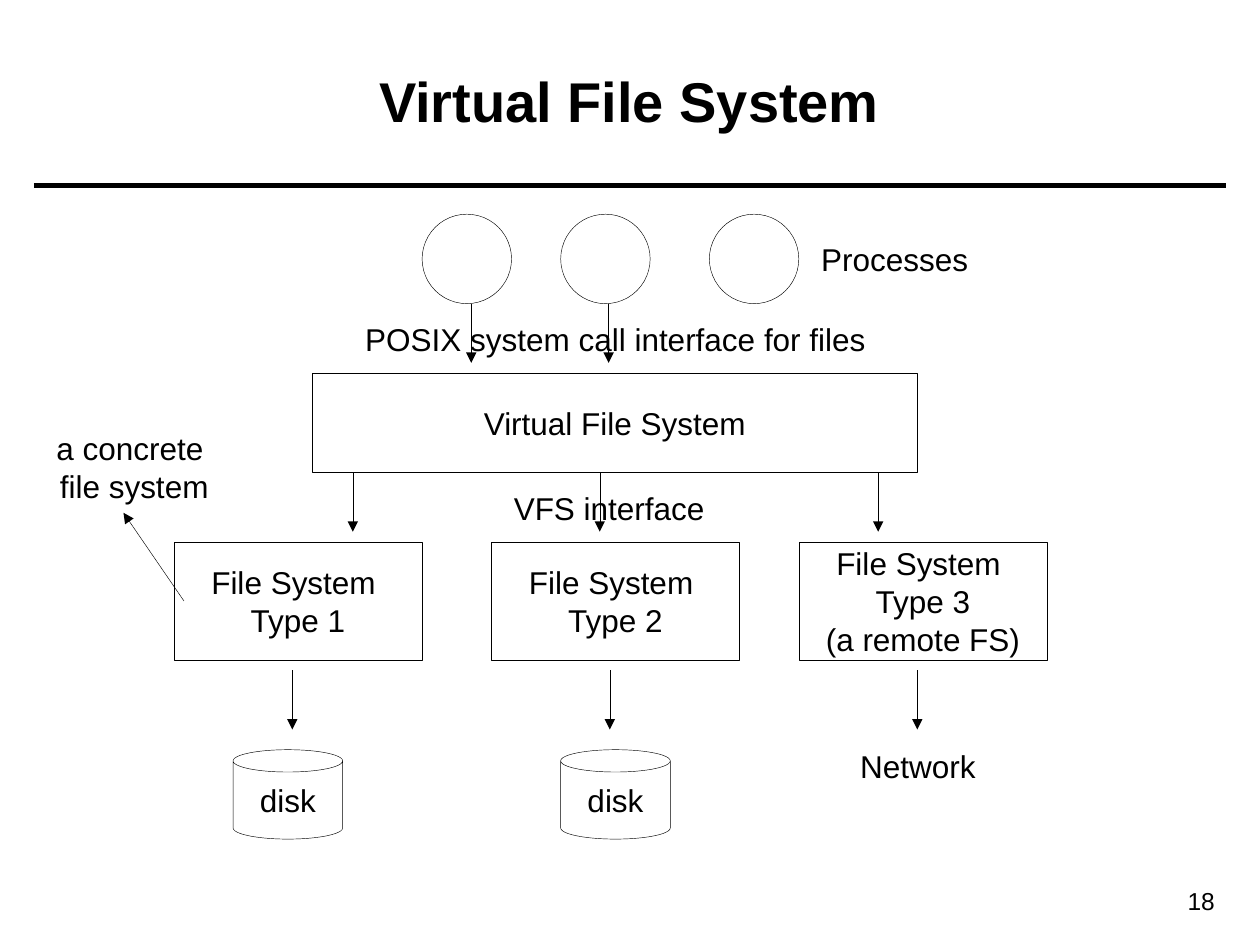
"""Build the Virtual File System layer diagram slide."""
from lxml import etree
from pptx import Presentation
from pptx.dml.color import RGBColor
from pptx.enum.shapes import MSO_CONNECTOR, MSO_SHAPE
from pptx.enum.text import MSO_ANCHOR, MSO_AUTO_SIZE, PP_ALIGN
from pptx.oxml.ns import qn
from pptx.util import Pt

PX = 9144
FONT = "Arial"
COLORS = {"ink": "000000", "paper": "FFFFFF"}
INK = RGBColor.from_string(COLORS["ink"])
LINE = MSO_CONNECTOR.STRAIGHT
RECT, OVAL, CAN = MSO_SHAPE.RECTANGLE, MSO_SHAPE.OVAL, MSO_SHAPE.CAN
MIDDLE = MSO_ANCHOR.MIDDLE
CENTER, RIGHT = PP_ALIGN.CENTER, PP_ALIGN.RIGHT
FIT = MSO_AUTO_SIZE.SHAPE_TO_FIT_TEXT

deck = Presentation()
deck.slide_width, deck.slide_height = 1000 * PX, 750 * PX
slide = deck.slides.add_slide(deck.slide_layouts[5])
slide.background.fill.solid()
slide.background.fill.fore_color.rgb = RGBColor.from_string(COLORS["paper"])
shapes = slide.shapes


def write(shape, text, size=18, align=CENTER, bold=False):
    frame = shape.text_frame
    frame.text = text
    for para in frame.paragraphs:
        para.alignment = align
        for run in para.runs:
            font = run.font
            font.name, font.size, font.bold = FONT, Pt(size), bold
            font.color.rgb = INK


def link(ends, width=0.25, arrow=True):
    line = shapes.add_connector(LINE, *[n * PX for n in ends])
    line.line.color.rgb = INK
    line.line.width = Pt(width)
    if arrow:
        tip = etree.SubElement(line.line._get_or_add_ln(), qn("a:tailEnd"))
        tip.set("type", "triangle")
    etree.SubElement(line._element.spPr, qn("a:effectLst"))


link((27, 147, 973, 147), 3, False)

title = shapes.title
title.left, title.top, title.width, title.height = [n * PX for n in (35, 17, 929, 125)]
title.text_frame.vertical_anchor = MIDDLE
write(title, "Virtual File System", 32, bold=True)

nodes = [(RECT, 248, 296, 480, 79, "Virtual File System")]
types = ["Type 1", "Type 2", "Type 3\n(a remote FS)"]
for left, kind in zip((138, 390, 634), types):
    nodes.append((RECT, left, 430, 197, 94, "File System \n" + kind))
for left in (185, 445):
    nodes.append((CAN, left, 595, 87, 71, "disk"))
for left in (335, 445, 563):
    nodes.append((OVAL, left, 170, 71, 71, ""))

for form, left, top, width, height, text in nodes:
    node = shapes.add_shape(form, left * PX, top * PX, width * PX, height * PX)
    node.shadow.inherit = False
    node.fill.background()
    node.line.color.rgb = INK
    node.line.width = Pt(0.25)
    if text:
        node.text_frame.word_wrap = False
        node.text_frame.vertical_anchor = MIDDLE
        write(node, text)

labels = [
    (639, 186, 142, 40, "Processes"),
    (277, 249, 423, 40, "POSIX system call interface for files"),
    (395, 383, 177, 40, "VFS interface"),
    (670, 588, 117, 40, "Network"),
    (32, 336, 149, 70, "a concrete \nfile system"),
]
for left, top, width, height, text in labels:
    label = shapes.add_textbox(left * PX, top * PX, width * PX, height * PX)
    label.text_frame.word_wrap = False
    label.text_frame.auto_size = FIT
    write(label, text)

tiers = [(241, (374, 483)), (375, (280, 476, 697)), (532, (232, 484, 728))]
for top, spots in tiers:
    for x in spots:
        link((x, top, x, top + 47))
link((146, 477, 98, 407))

number = shapes.add_textbox(870 * PX, 698 * PX, 104 * PX, 34 * PX)
number.text_frame.word_wrap = True
write(number, "18", 14, RIGHT)

deck.save("out.pptx")
